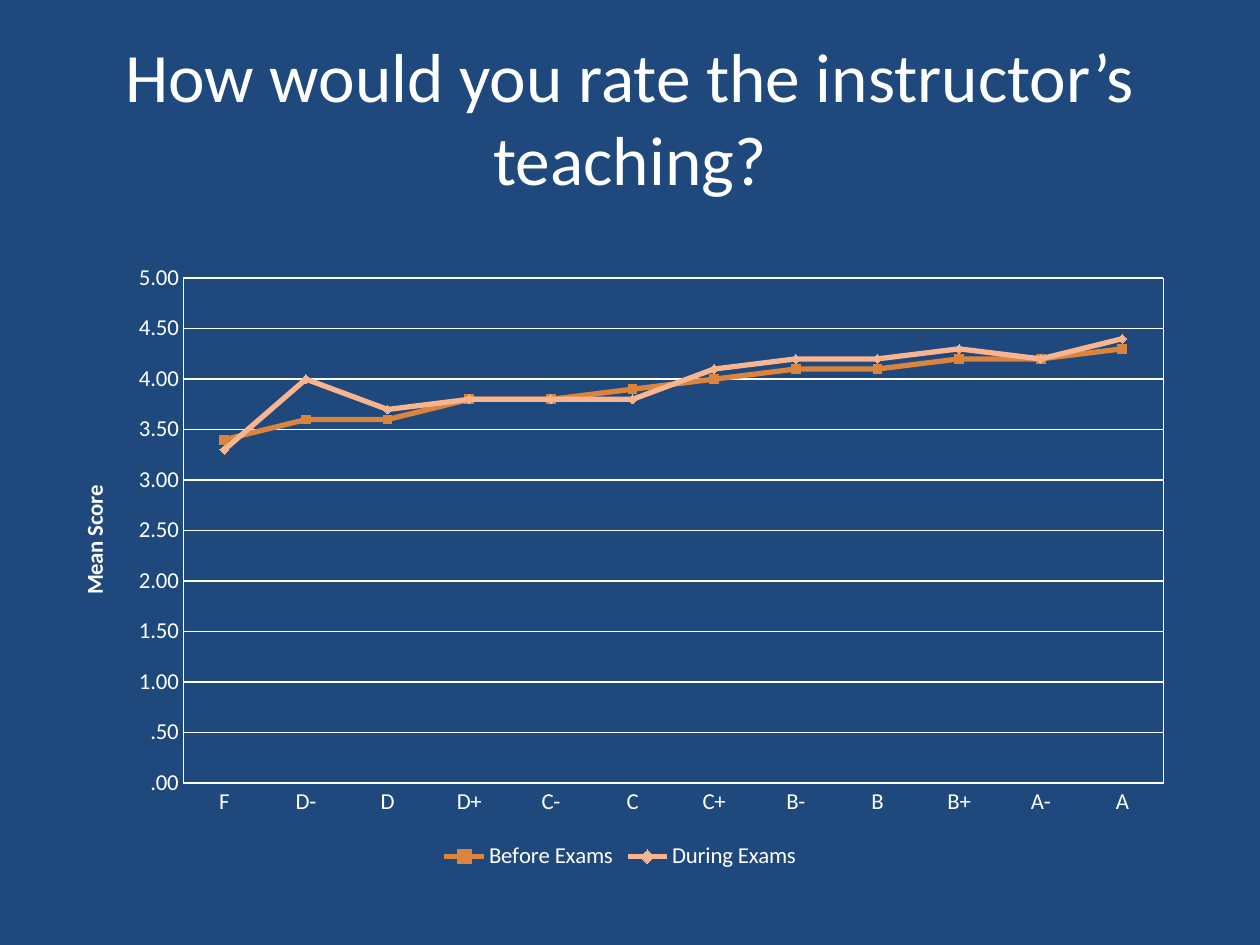
from dataclasses import dataclass

from lxml import etree
from pptx import Presentation
from pptx.chart.data import CategoryChartData
from pptx.dml.color import RGBColor
from pptx.enum.chart import XL_CHART_TYPE as ChartType
from pptx.enum.chart import XL_LEGEND_POSITION as LegendPos
from pptx.enum.chart import XL_MARKER_STYLE as Marker
from pptx.enum.chart import XL_TICK_MARK as Tick
from pptx.enum.text import MSO_ANCHOR, MSO_AUTO_SIZE, PP_ALIGN
from pptx.oxml import parse_xml
from pptx.oxml.ns import nsdecls, qn
from pptx.util import Cm, Pt


@dataclass(frozen=True)
class Theme:
    font: str = "Calibri"
    background: RGBColor = RGBColor(0x1F, 0x49, 0x7D)
    text: RGBColor = RGBColor(0xFF, 0xFF, 0xFF)
    before: RGBColor = RGBColor(0xDB, 0x84, 0x3D)
    during: RGBColor = RGBColor(0xF9, 0xB5, 0x90)
    title_size: Pt = Pt(39.6)
    chart_size: Pt = Pt(13)
    rule: Pt = Pt(0.75)
    series_line: Pt = Pt(3)
    marker_size: int = 5


THEME = Theme()

GRADES = ["F", "D-", "D", "D+", "C-", "C", "C+", "B-", "B", "B+", "A-", "A"]
SERIES = [
    ("Before Exams", THEME.before, Marker.SQUARE,
     [3.4, 3.6, 3.6, 3.8, 3.8, 3.9, 4, 4.1, 4.1, 4.2, 4.2, 4.3]),
    ("During Exams", THEME.during, Marker.DIAMOND,
     [3.3, 4, 3.7, 3.8, 3.8, 3.8, 4.1, 4.2, 4.2, 4.3, 4.2, 4.4]),
]


def style_font(font, size, bold=False):
    font.name, font.size, font.bold = THEME.font, size, bold
    font.color.rgb = THEME.text


def style_line(line, color, width):
    line.color.rgb = color
    line.width = width


def set_layout(parent, before, **fractions):
    """Place a chart part by fractions of the chart box."""
    for old in parent.findall(qn("c:layout")):
        parent.remove(old)
    layout = parse_xml(f"<c:layout {nsdecls('c')}><c:manualLayout/></c:layout>")
    manual = layout[0]
    for tag, value in fractions.items():
        etree.SubElement(manual, qn(f"c:{tag}")).set("val", str(value))
    parent.find(qn(before)).addprevious(layout)


def add_title(slide, text, left, top, width, height):
    sp = slide.shapes.title
    sp.left, sp.top, sp.width, sp.height = left, top, width, height
    tf = sp.text_frame
    tf.text = text
    tf.word_wrap = True
    tf.auto_size = MSO_AUTO_SIZE.NONE
    tf.vertical_anchor = MSO_ANCHOR.MIDDLE
    p = tf.paragraphs[0]
    p.alignment = PP_ALIGN.CENTER
    style_font(p.runs[0].font, THEME.title_size)


def style_axes(chart):
    for axis in (chart.category_axis, chart.value_axis):
        axis.major_tick_mark = axis.minor_tick_mark = Tick.NONE
        style_font(axis.tick_labels.font, THEME.chart_size)
        style_line(axis.format.line, THEME.text, THEME.rule)

    axis = chart.value_axis
    axis.minimum_scale, axis.maximum_scale, axis.major_unit = 0, 5, 0.5
    axis.tick_labels.number_format = "####.00"
    axis.tick_labels.number_format_is_linked = False
    axis.has_major_gridlines = True
    style_line(axis.major_gridlines.format.line, THEME.text, THEME.rule)
    axis.format.line.fill.background()

    tf = axis.axis_title.text_frame
    tf.text = "Mean Score"
    style_font(tf.paragraphs[0].runs[0].font, THEME.chart_size, bold=True)


def style_series(chart):
    for series, (_, color, marker, _) in zip(chart.plots[0].series, SERIES):
        series.smooth = False
        style_line(series.format.line, color, THEME.series_line)
        series.marker.style = marker
        series.marker.size = THEME.marker_size
        series.marker.format.fill.solid()
        series.marker.format.fill.fore_color.rgb = color
        series.marker.format.line.color.rgb = color


def style_plot_area(chart):
    plot_area = chart.plots[0]._element.getparent()
    set_layout(plot_area, "c:lineChart", layoutTarget="inner", xMode="edge",
               yMode="edge", x=0.115, y=0.042, w=0.864, h=0.81)
    plot_area.append(parse_xml(
        f"<c:spPr {nsdecls('c', 'a')}><a:noFill/><a:ln w=\"{THEME.rule}\"><a:solidFill>"
        f"<a:srgbClr val=\"{THEME.text}\"/></a:solidFill></a:ln></c:spPr>"))


def add_score_chart(slide, left, top, width, height):
    data = CategoryChartData(number_format="####.00")
    data.categories = GRADES
    for name, _, _, scores in SERIES:
        data.add_series(name, scores)
    chart = slide.shapes.add_chart(
        ChartType.LINE_MARKERS, left, top, width, height, data).chart
    style_font(chart.font, THEME.chart_size)
    chart.has_title = False
    chart.plots[0].vary_by_categories = False
    style_axes(chart)
    style_series(chart)
    style_plot_area(chart)

    # Legend below the plot
    chart.has_legend = True
    chart.legend.position = LegendPos.BOTTOM
    chart.legend.include_in_layout = False
    style_font(chart.legend.font, THEME.chart_size)


def main():
    prs = Presentation()
    prs.slide_width, prs.slide_height = Cm(25.4), Cm(19.05)
    slide = prs.slides.add_slide(prs.slide_layouts.get_by_name("Title Only"))
    slide.background.fill.solid()
    slide.background.fill.fore_color.rgb = THEME.background

    add_title(slide, "How would you rate the instructor’s teaching?",
              Cm(1.27), Cm(0.76), Cm(22.86), Cm(3.18))
    add_score_chart(slide, Cm(1.07), Cm(5.08), Cm(22.86), Cm(12.57))
    prs.save("out.pptx")


if __name__ == "__main__":
    main()
